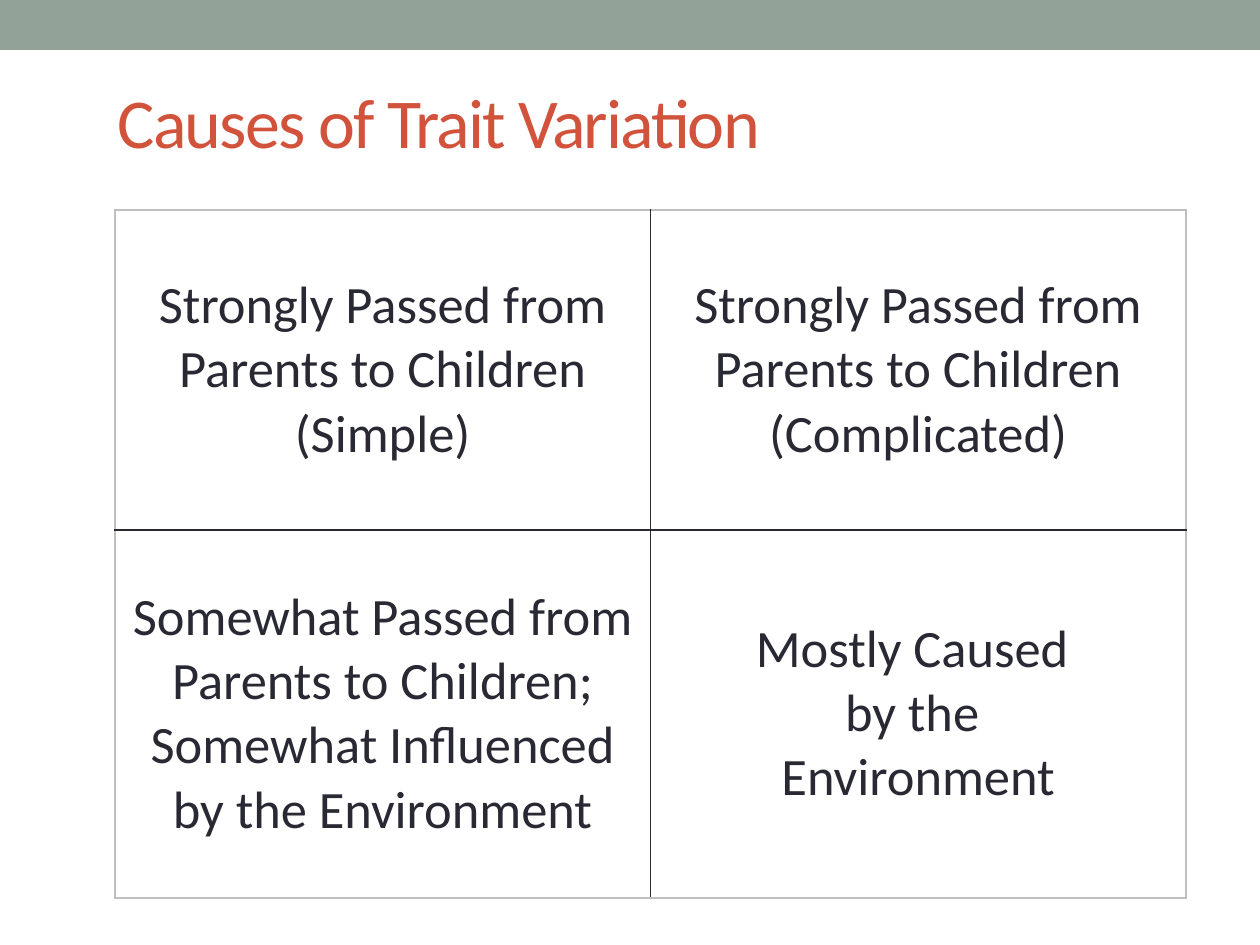
"""Build a slide with a two-by-two table of the causes of trait variation."""
from lxml import etree
from pptx import Presentation
from pptx import util as u
from pptx.dml.color import RGBColor
from pptx.enum import shapes, text
from pptx.oxml.ns import qn

PX = 914400 // 126
FONT = "Calibri"
HUES = {"band": "93A299", "title": "D2533C", "ink": "292934", "edge": "BFBFBF"}
TITLE = "Causes of Trait Variation"
CELLS = [
    ["Strongly Passed from Parents to Children (Simple)",
     "Strongly Passed from Parents to Children (Complicated)"],
    ["Somewhat Passed from Parents to Children; Somewhat Influenced by the Environment",
     "Mostly Caused \vby the \vEnvironment"],
]
ROWS = [320, 368]
COL = 535.5


def box(*nums):
    return [round(n * PX) for n in nums]


def style(frame, size, hue, align):
    for para in frame.paragraphs:
        para.alignment = align
        for run in para.runs:
            run.font.name = FONT
            run.font.size = u.Pt(size)
            run.font.color.rgb = RGBColor.from_string(HUES[hue])


def rule(cell, edges):
    props = cell._tc.get_or_add_tcPr()
    for i, (side, hue) in enumerate(edges):
        line = etree.Element(qn("a:ln" + side), w=str(u.Pt(1)))
        fill = etree.SubElement(line, qn("a:solidFill"))
        etree.SubElement(fill, qn("a:srgbClr"), val=HUES[hue])
        props.insert(i, line)


def main():
    deck = Presentation()
    deck.slide_width, deck.slide_height = box(1260, 945)
    slide = deck.slides.add_slide(deck.slide_layouts[5])

    band = slide.shapes.add_shape(shapes.MSO_SHAPE.RECTANGLE, *box(0, 0, 1260, 50))
    band.shadow.inherit = False
    band.fill.solid()
    band.fill.fore_color.rgb = RGBColor.from_string(HUES["band"])
    band.line.fill.background()

    title = slide.shapes.title
    title.left, title.top, title.width, title.height = box(105, 53, 1092, 136)
    title.text_frame.text = TITLE
    title.text_frame.vertical_anchor = text.MSO_ANCHOR.MIDDLE
    style(title.text_frame, 40, "title", text.PP_ALIGN.LEFT)
    title.text_frame.paragraphs[0].runs[0].font._element.set("spc", "-100")

    grid = slide.shapes.add_table(2, 2, *box(115, 210, 2 * COL, sum(ROWS))).table
    grid.first_row = grid.horz_banding = False
    for col in grid.columns:
        col.width = round(COL * PX)
    for r, (high, words) in enumerate(zip(ROWS, CELLS)):
        grid.rows[r].height = high * PX
        for c, word in enumerate(words):
            cell = grid.cell(r, c)
            cell.text_frame.text = word
            cell.vertical_anchor = text.MSO_ANCHOR.MIDDLE
            cell.margin_left = cell.margin_right = 8 * PX
            cell.margin_top = cell.margin_bottom = 0
            cell.fill.background()
            style(cell.text_frame, 30, "ink", text.PP_ALIGN.CENTER)
            inner = {"L": c == 1, "R": c == 0, "T": r == 1, "B": r == 0}
            rule(cell, [(s, "ink" if i else "edge") for s, i in inner.items()])

    deck.save("out.pptx")


if __name__ == "__main__":
    main()
